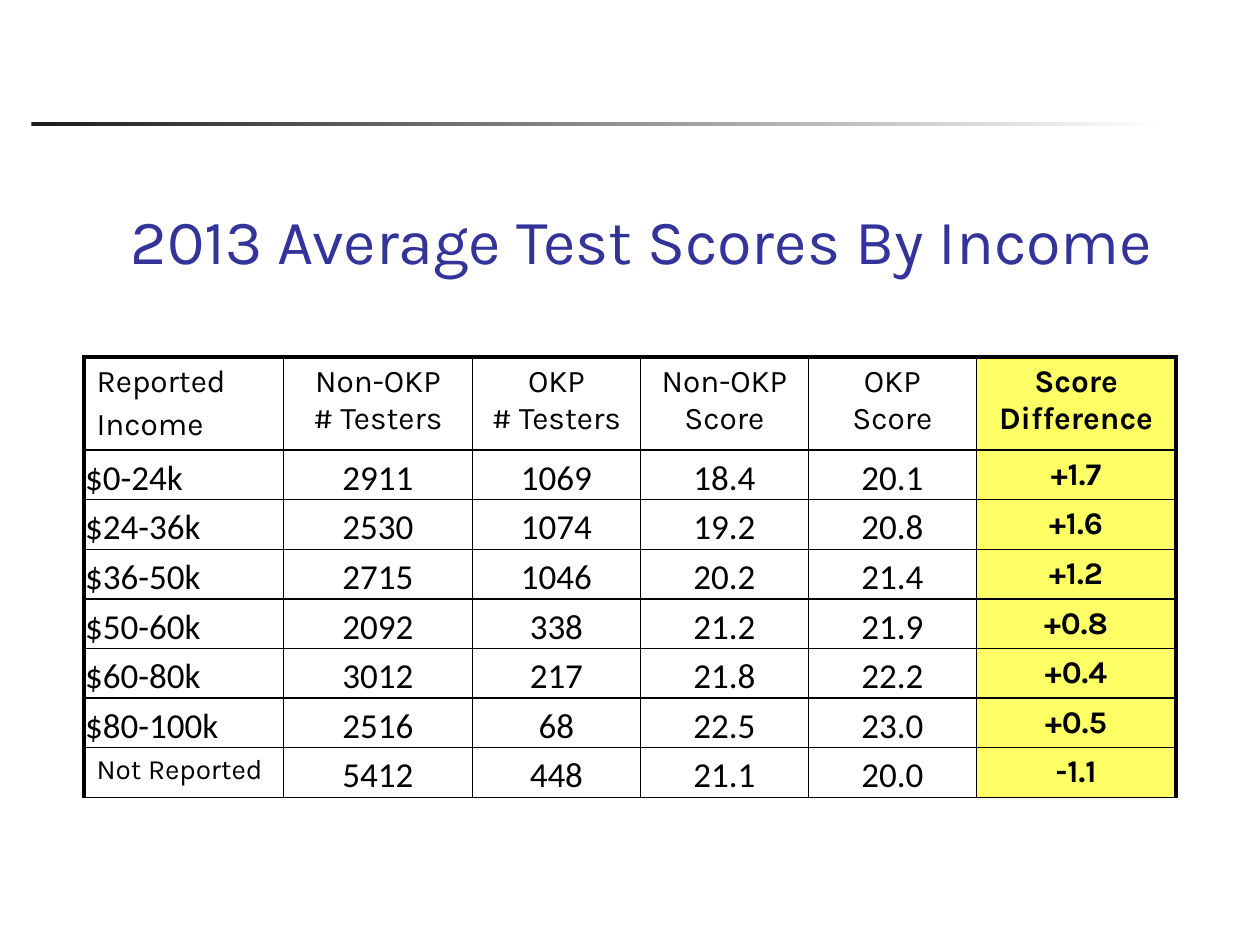
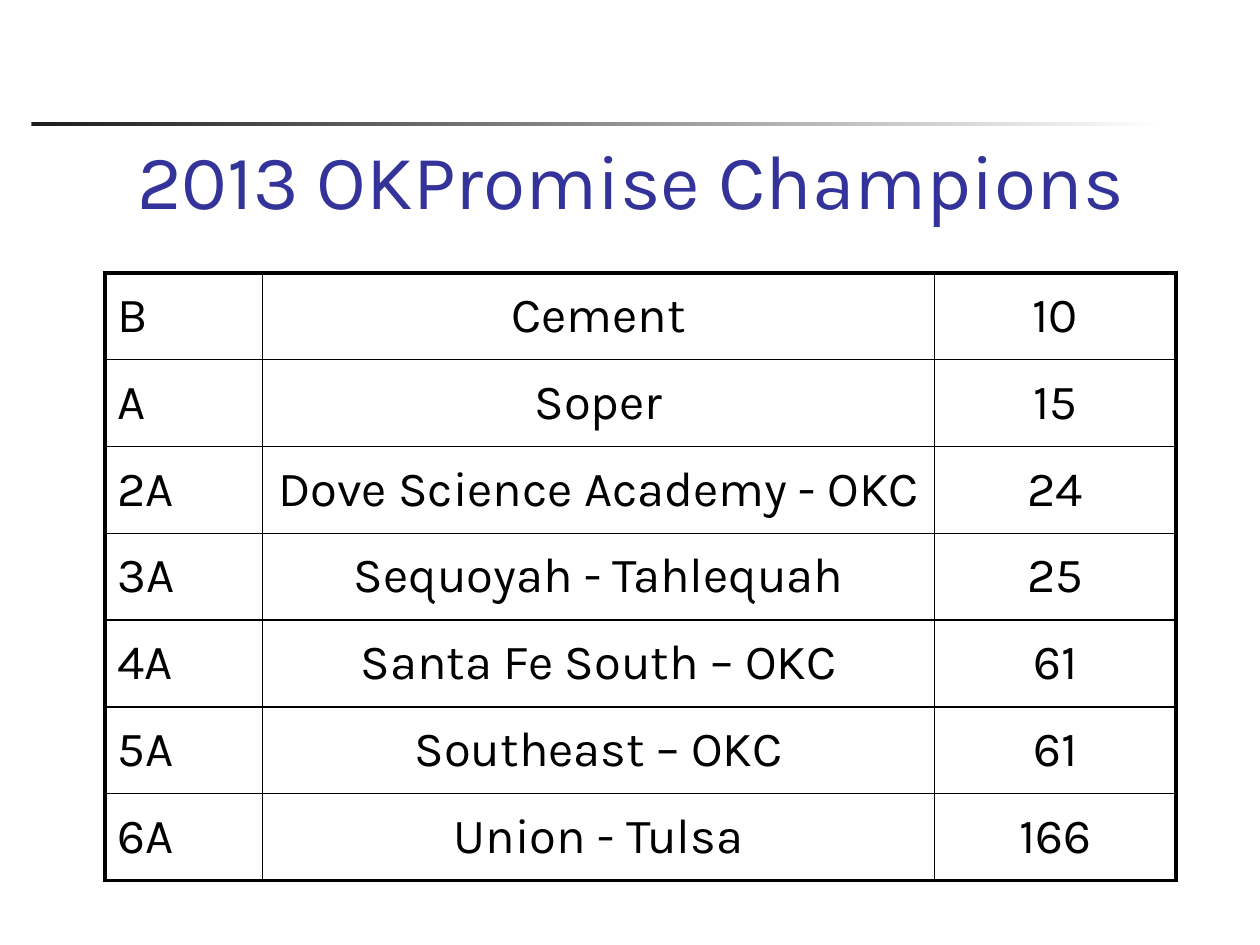
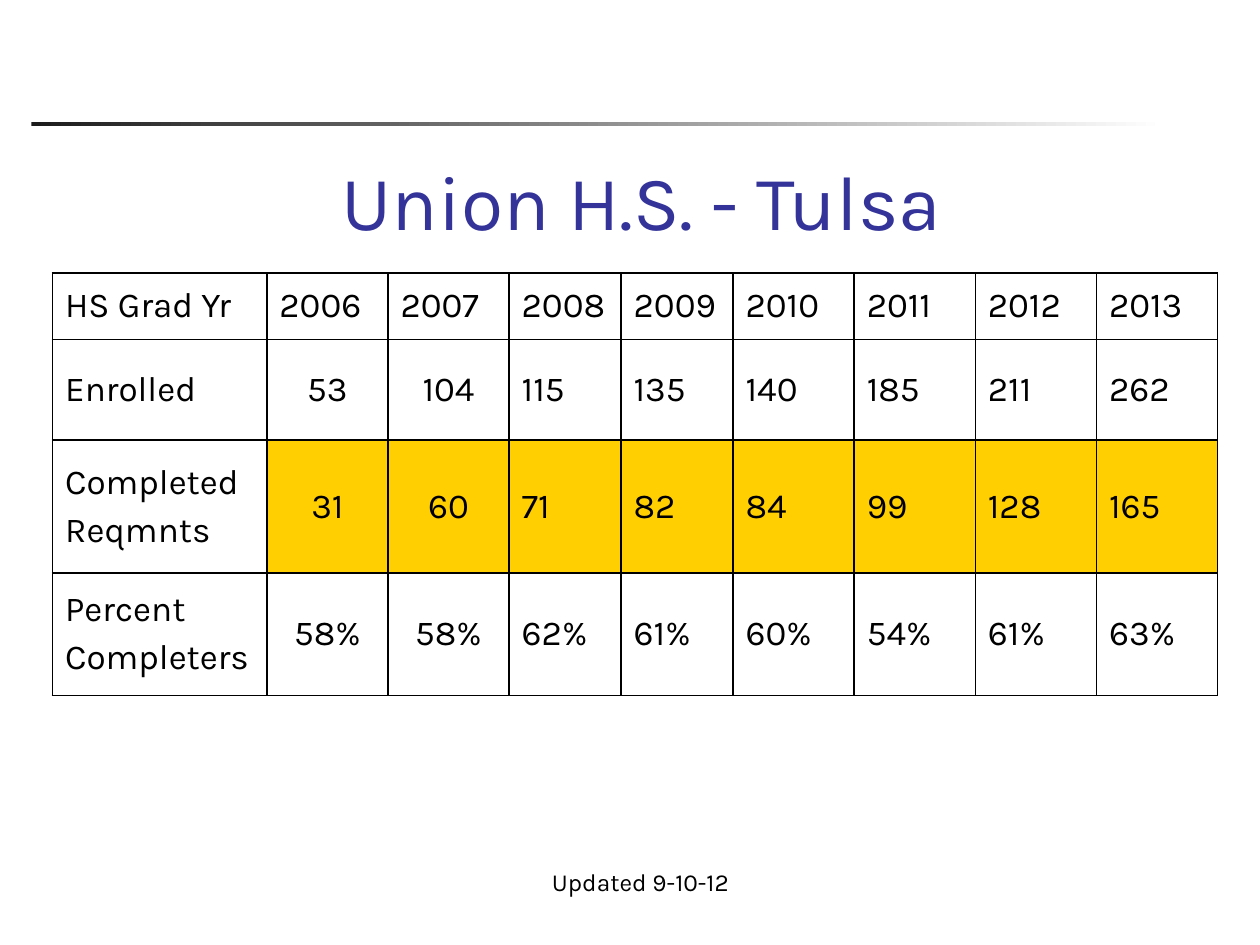
import pptx
import pptx.util
import pptx.dml.color
import pptx.enum.shapes
import pptx.enum.text
import pptx.oxml
import pptx.oxml.ns

Pt = pptx.util.Pt
RGBColor = pptx.dml.color.RGBColor
ALIGN = pptx.enum.text.PP_ALIGN
ANCHOR = pptx.enum.text.MSO_ANCHOR

BLACK = RGBColor(0x00, 0x00, 0x00)
WHITE = RGBColor(0xFF, 0xFF, 0xFF)
CHARCOAL = RGBColor(0x1C, 0x1C, 0x1C)
INDIGO = RGBColor(0x33, 0x33, 0x99)
YELLOW = RGBColor(0xFF, 0xFF, 0x66)
GOLD = RGBColor(0xFF, 0xCF, 0x01)

TITLE_FONT = "Karla"
DATA_FONT = "Calibri"
THIN, THICK = 1, 2.25

INCOME_ROWS = [
    ["Reported\nIncome", "Non-OKP\v# Testers", "OKP\v# Testers",
     "Non-OKP\vScore", "OKP\vScore", "Score\vDifference"],
    ["$0-24k", "2911", "1069", "18.4", "20.1", "+1.7"],
    ["$24-36k", "2530", "1074", "19.2", "20.8", "+1.6"],
    ["$36-50k", "2715", "1046", "20.2", "21.4", "+1.2"],
    ["$50-60k", "2092", "338", "21.2", "21.9", "+0.8"],
    ["$60-80k", "3012", "217", "21.8", "22.2", "+0.4"],
    ["$80-100k", "2516", "68", "22.5", "23.0", "+0.5"],
    ["Not Reported", "5412", "448", "21.1", "20.0", "-1.1"],
]
CHAMPION_ROWS = [
    ["B", "Cement", "10"],
    ["A", "Soper", "15"],
    ["2A", "Dove Science Academy - OKC", "24"],
    ["3A", "Sequoyah - Tahlequah", "25"],
    ["4A", "Santa Fe South – OKC", "61"],
    ["5A", "Southeast – OKC", "61"],
    ["6A", "Union - Tulsa", "166"],
]
UNION_ROWS = [
    ["HS Grad Yr", "2006", "2007", "2008", "2009", "2010", "2011", "2012", "2013"],
    ["Enrolled", "53", "104", "115", "135", "140", "185", "211", "262"],
    ["Completed\nReqmnts", "31", "60", "71", "82", "84", "99", "128", "165"],
    ["Percent\nCompleters", "58%", "58%", "62%", "61%", "60%", "54%", "61%", "63%"],
]


def format_text(tf, text, size, color=BLACK, font=TITLE_FONT, bold=False,
                align=ALIGN.LEFT):
    """Fill a text frame; later paragraphs get 20% of the size before them."""
    tf.text = text
    for i, p in enumerate(tf.paragraphs):
        p.alignment = align
        if i:
            p.space_before = Pt(0.2 * size)
        for r in p.runs:
            r.font.name = font
            r.font.size = Pt(size)
            r.font.bold = bold
            r.font.color.rgb = color


def add_rule(s, layout):
    """Fading rule, moved to the layout so that every slide shows it."""
    rule = s.shapes.add_shape(pptx.enum.shapes.MSO_SHAPE.RECTANGLE,
                              Pt(18), Pt(69.8), Pt(648), Pt(2.25))
    rule.shadow.inherit = False
    rule.line.fill.background()
    rule.fill.gradient()
    rule.fill.gradient_angle = 0
    for stop, color, position in zip(rule.fill.gradient_stops, (CHARCOAL, WHITE), (0, 1)):
        stop.color.rgb = color
        stop.position = position
    layout.shapes.element.append(rule.element)


def add_titled_slide(prs, layout, text, box, size):
    s = prs.slides.add_slide(layout)
    sp = s.shapes.title
    sp.left, sp.top, sp.width, sp.height = map(Pt, box)
    tf = sp.text_frame
    tf.auto_size = pptx.enum.text.MSO_AUTO_SIZE.NONE
    tf.vertical_anchor = ANCHOR.BOTTOM
    format_text(tf, text, size, INDIGO, align=ALIGN.CENTER)
    return s


def set_borders(cell, widths):
    """Draw the left, right, top and bottom borders, widths in points."""
    tc_pr = cell._tc.get_or_add_tcPr()
    for side, width in zip("LRTB", widths):
        tc_pr.append(pptx.oxml.parse_xml(
            f'<a:ln{side} {pptx.oxml.ns.nsdecls("a")} w="{Pt(width)}">'
            f'<a:solidFill><a:srgbClr val="{BLACK}"/></a:solidFill></a:ln{side}>'))


def add_grid(s, left, top, widths, heights, rows, frame, style):
    """Table with thin inner lines; frame gives the outer widths (L, R, T, B).

    style(i, j) returns the text options of a cell, and its
    anchor, fill and tight margins where these apply.
    """
    last_row, last_col = len(rows) - 1, len(widths) - 1
    tbl = s.shapes.add_table(len(rows), len(widths), Pt(left), Pt(top),
                             Pt(sum(widths)), Pt(sum(heights))).table
    tbl.first_row = tbl.horz_banding = False
    for column, width in zip(tbl.columns, widths):
        column.width = Pt(width)
    for row, height in zip(tbl.rows, heights):
        row.height = Pt(height)
    for i, row in enumerate(rows):
        for j, text in enumerate(row):
            cell = tbl.cell(i, j)
            options = style(i, j)
            outer = (j == 0, j == last_col, i == 0, i == last_row)
            set_borders(cell, [w if edge else THIN for w, edge in zip(frame, outer)])
            cell.vertical_anchor = options.pop("anchor", ANCHOR.MIDDLE)
            fill = options.pop("fill", None)
            if fill is None:
                cell.fill.background()
            else:
                cell.fill.solid()
                cell.fill.fore_color.rgb = fill
            if options.pop("tight", False):
                cell.margin_left = cell.margin_right = cell.margin_top = Pt(0.7)
                cell.margin_bottom = 0
            format_text(cell.text_frame, text, **options)


def income_style(i, j):
    align = ALIGN.CENTER if j else ALIGN.LEFT
    if j == 5:
        return dict(size=18, bold=True, align=align, anchor=ANCHOR.TOP, fill=YELLOW)
    if i == 0:
        return dict(size=18, align=align, anchor=ANCHOR.TOP)
    if (i, j) == (7, 0):
        return dict(size=16, anchor=ANCHOR.TOP)
    return dict(size=20, font=DATA_FONT, align=align, anchor=ANCHOR.BOTTOM, tight=True)


def champion_style(i, j):
    return dict(size=28, align=ALIGN.CENTER if j else ALIGN.LEFT)


def union_style(i, j):
    centred = i > 0 and j in (1, 2)
    return dict(size=20, align=ALIGN.CENTER if centred else ALIGN.LEFT,
                fill=GOLD if i == 2 and j else None)


def add_update_note(s, left, top, width, height):
    tf = s.shapes.add_textbox(Pt(left), Pt(top), Pt(width), Pt(height)).text_frame
    tf.word_wrap = True
    format_text(tf, "Updated 9-10-12", 14, align=ALIGN.CENTER)


def main():
    prs = pptx.Presentation()
    prs.slide_width, prs.slide_height = Pt(720), Pt(540)
    layout = prs.slide_layouts.get_by_name("Title Only")

    # Scores by income
    s = add_titled_slide(prs, layout, "2013 Average Test Scores By Income",
                         (60, 108, 613.5, 54), 36)
    add_rule(s, layout)
    add_grid(s, 48, 204, [114, 108, 96, 96, 96, 114], [53.2] + [28.35] * 7,
             INCOME_ROWS, (THICK, THICK, THICK, THIN), income_style)

    # Champions by school class
    s = add_titled_slide(prs, layout, "2013 OKPromise Champions",
                         (48, 84, 625.5, 48), 44)
    add_grid(s, 60, 156, [90, 384, 138], [49.6] * 7,
             CHAMPION_ROWS, (THICK,) * 4, champion_style)

    # One school over the years
    s = add_titled_slide(prs, layout, "Union H.S. - Tulsa",
                         (60, 78, 613.5, 66), 44)
    add_grid(s, 30, 156, [122.5] + [69.25] * 2 + [64] * 2 + [69.25] * 4,
             [38, 57.5, 76, 70], UNION_ROWS, (THIN,) * 4, union_style)
    add_update_note(s, 234, 492, 264, 24.5)

    prs.save("out.pptx")


if __name__ == "__main__":
    main()
